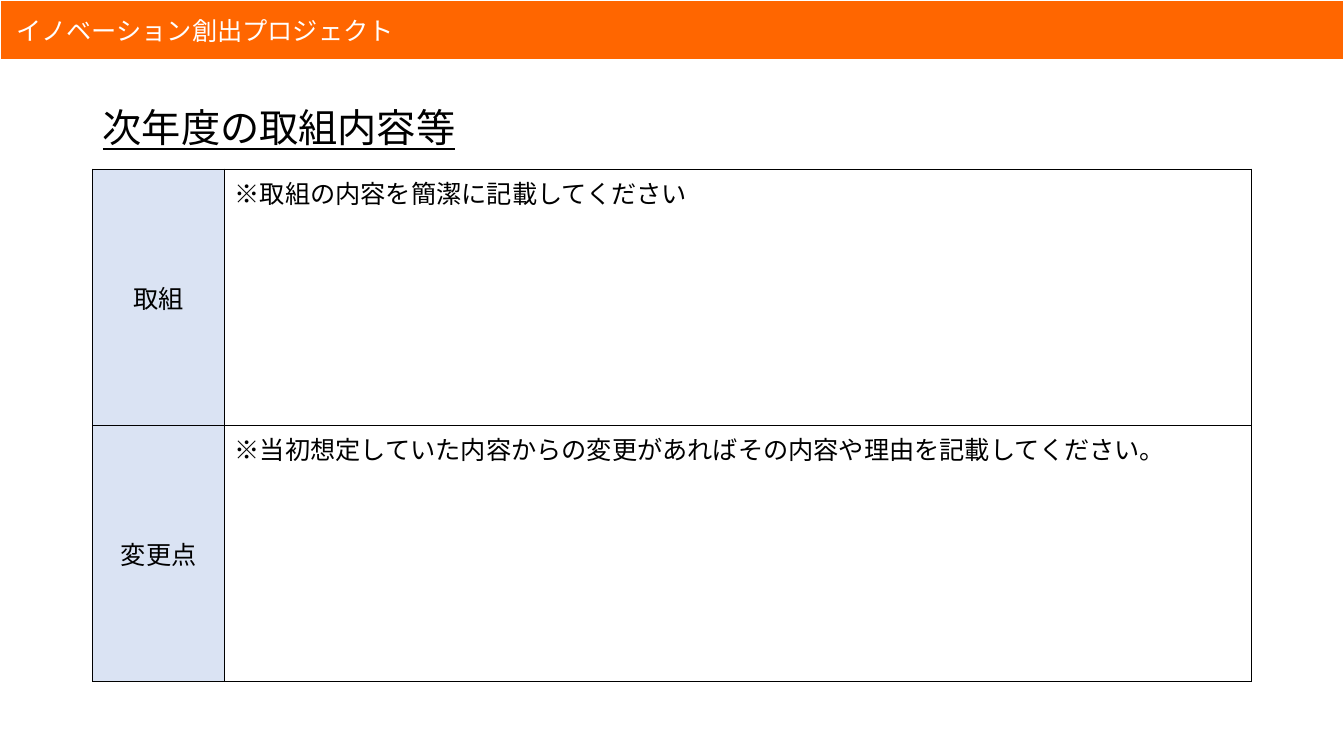
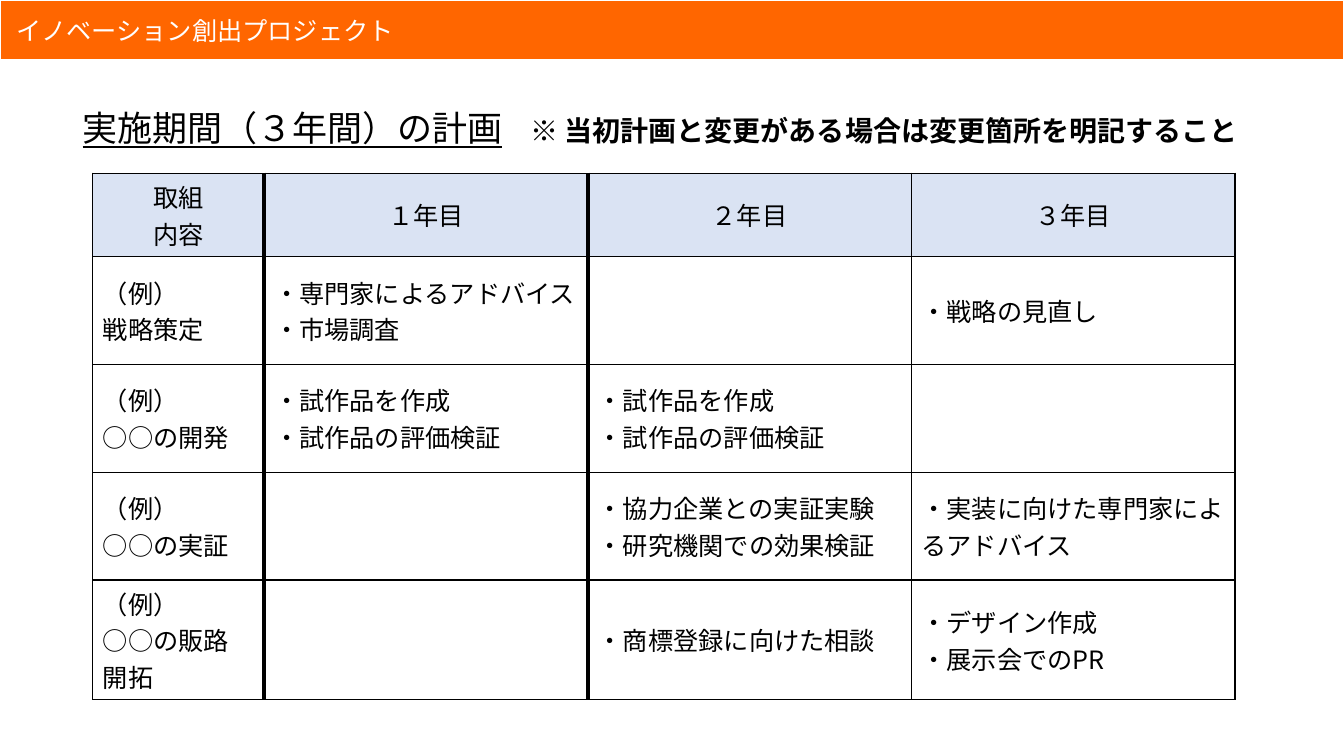
from lxml.etree import SubElement
from pptx import Presentation
from pptx.dml.color import RGBColor
from pptx.enum.lang import MSO_LANGUAGE_ID
from pptx.enum.shapes import MSO_SHAPE
from pptx.enum.text import MSO_ANCHOR, MSO_AUTO_SIZE, PP_ALIGN
from pptx.oxml import parse_xml
from pptx.oxml.ns import nsdecls, qn
from pptx.util import Inches, Pt

ORANGE = RGBColor(0xFF, 0x66, 0x00)
PALE_BLUE = RGBColor(0xDA, 0xE3, 0xF3)
BLACK = RGBColor(0x00, 0x00, 0x00)
WHITE = RGBColor(0xFF, 0xFF, 0xFF)
FONT = "Noto Sans CJK JP"
GRID = 100  # columns across and rows down the slide
THIN, THICK = 1, 3


def add_text(paragraph, text, size=18, color=BLACK, bold=False, underline=False):
    """Add one formatted run to a paragraph."""
    run = paragraph.add_run()
    run.text = text
    font = run.font
    font.size, font.bold, font.underline = Pt(size), bold, underline
    font.color.rgb = color
    font.name = FONT
    font.language_id = MSO_LANGUAGE_ID.JAPANESE
    properties = run._r.get_or_add_rPr()
    east_asian = SubElement(properties, qn("a:ea"), typeface=FONT)
    properties.find(qn("a:latin")).addnext(east_asian)


def set_borders(cell, **widths):
    """Draw the four cell edges; widths are in points, keyed L, R, T, B."""
    properties = cell._tc.get_or_add_tcPr()
    for index, edge in enumerate("LRTB"):
        width = Pt(widths.get(edge, THIN))
        properties.insert(index, parse_xml(
            f'<a:ln{edge} {nsdecls("a")} w="{width}"><a:solidFill>'
            f'<a:srgbClr val="{BLACK}"/></a:solidFill></a:ln{edge}>'))


class Deck:
    """Holds the shared style and the current slide."""

    def __init__(self):
        self.presentation = Presentation()
        self.presentation.slide_width = Inches(13.33)
        self.presentation.slide_height = Inches(7.5)
        self.layout = self.presentation.slide_layouts.get_by_name("Title Only")
        self.slide = None

    def across(self, columns):
        return round(self.presentation.slide_width * columns / GRID)

    def down(self, rows):
        return round(self.presentation.slide_height * rows / GRID)

    def add_slide(self):
        first = self.slide is None
        self.slide = self.presentation.slides.add_slide(self.layout)
        if first:
            self.add_layout_band("イノベーション創出プロジェクト")

    def add_layout_band(self, text):
        """Build the band, then move it to the layout that all slides share."""
        band = self.slide.shapes.add_shape(
            MSO_SHAPE.RECTANGLE, 0, 0, self.across(GRID), self.down(8))
        band.shadow.inherit = False
        band.fill.solid()
        band.fill.fore_color.rgb = ORANGE
        band.line.color.rgb = WHITE
        band.line.width = Pt(1.5)
        frame = band.text_frame
        frame.margin_left = Inches(0.16)
        frame.vertical_anchor = MSO_ANCHOR.MIDDLE
        frame.paragraphs[0].alignment = PP_ALIGN.LEFT
        add_text(frame.paragraphs[0], text, color=WHITE)
        band.element.nvSpPr.cNvPr.set("id", "20")
        self.layout.shapes.element.insert(2, band.element)

    def add_title(self, left, width, *parts):
        """Fill the title placeholder with (text, format) parts."""
        title = self.slide.shapes.title
        title.left, title.top = self.across(left), self.down(9.87)
        title.width, title.height = self.across(width), self.down(14.67)
        frame = title.text_frame
        frame.word_wrap = True
        frame.auto_size = MSO_AUTO_SIZE.NONE
        frame.vertical_anchor = MSO_ANCHOR.MIDDLE
        paragraph = frame.paragraphs[0]
        paragraph.alignment = PP_ALIGN.LEFT
        paragraph.line_spacing = 0.9
        for text, text_format in parts:
            add_text(paragraph, text, **text_format)

    def add_table(self, top, columns, rows, content, header_row=False,
                  body_anchor=MSO_ANCHOR.MIDDLE, thick_edges=()):
        """Headers fill the first row or column; thick_edges number the inner
        vertical edges from the left."""
        table = self.slide.shapes.add_table(
            len(rows), len(columns), self.across(6.9), self.down(top),
            self.across(sum(columns)), self.down(sum(rows))).table
        table.first_row = table.horz_banding = False
        for column, width in zip(table.columns, columns):
            column.width = self.across(width)
        for row, height in zip(table.rows, rows):
            row.height = self.down(height)
        for row_index, texts in enumerate(content):
            for column_index, text in enumerate(texts):
                cell = table.cell(row_index, column_index)
                header = (row_index if header_row else column_index) == 0
                self.fill_cell(cell, text, header, body_anchor)
                set_borders(
                    cell,
                    L=THICK if column_index in thick_edges else THIN,
                    R=THICK if column_index + 1 in thick_edges else THIN)

    def fill_cell(self, cell, text, header, body_anchor):
        if header:
            cell.fill.solid()
            cell.fill.fore_color.rgb = PALE_BLUE
        else:
            cell.fill.background()
        cell.vertical_anchor = MSO_ANCHOR.MIDDLE if header else body_anchor
        if not text:
            return
        frame = cell.text_frame
        for index, line in enumerate(text.split("\n")):
            paragraph = frame.add_paragraph() if index else frame.paragraphs[0]
            paragraph.alignment = PP_ALIGN.CENTER if header else PP_ALIGN.LEFT
            add_text(paragraph, line)


def main():
    deck = Deck()

    # Next year's activities
    deck.add_slide()
    deck.add_title(6.9, 86.25, ("次年度の取組内容等", dict(size=28, underline=True)))
    deck.add_table(22.4, [9.82, 76.43], [33.87] * 2, [
        ["取組", "※取組の内容を簡潔に記載してください"],
        ["変更点", "※当初想定していた内容からの変更があればその内容や理由を記載してください。"],
    ], body_anchor=MSO_ANCHOR.TOP)

    # Three-year plan
    deck.add_slide()
    deck.add_title(
        5.4, 88.6,
        ("実施期間（３年間）の計画", dict(size=25, underline=True)),
        ("　", dict(size=20)),
        ("※ 当初計画と変更がある場合は変更箇所を明記すること", dict(size=20, bold=True)))
    trial = "・試作品を作成\n・試作品の評価検証"
    deck.add_table(22.93, [12.75] + [24.08] * 3, [8.93] + [14.27] * 4, [
        ["取組\n内容", "１年目", "２年目", "３年目"],
        ["（例）\n戦略策定", "・専門家によるアドバイス\n・市場調査", "", "・戦略の見直し"],
        ["（例）\n○○の開発", trial, trial, ""],
        ["（例）\n○○の実証", "", "・協力企業との実証実験\n・研究機関での効果検証",
         "・実装に向けた専門家によるアドバイス"],
        ["（例）\n○○の販路開拓", "", "・商標登録に向けた相談",
         "・デザイン作成\n・展示会でのPR"],
    ], header_row=True, thick_edges=(1, 2))

    deck.presentation.save("out.pptx")


if __name__ == "__main__":
    main()
